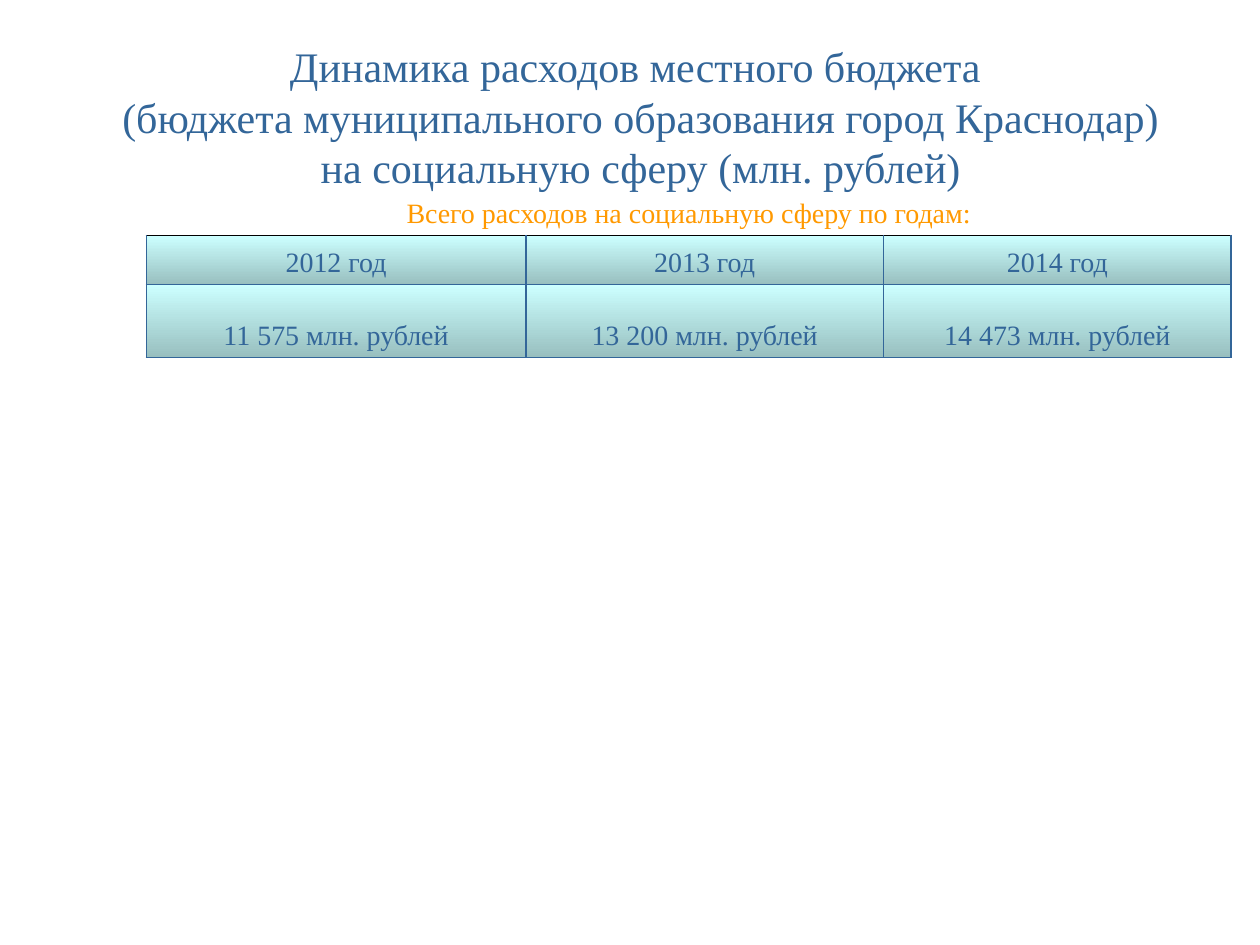
from lxml import etree
from pptx import Presentation
from pptx import util as u
from pptx.dml.color import RGBColor
from pptx.enum import text
from pptx.oxml.ns import qn

FONT = "Times New Roman"
BLUE, ORANGE, BLACK = "336699", "FF9900", "000000"
GRADIENT = ("CCFFFF", "98BFBF")
TITLE = (
    "Динамика расходов местного бюджета \v"
    "(бюджета муниципального образования город Краснодар)\v"
    "на социальную сферу (млн. рублей)"
)
CAPTION = "Всего расходов на социальную сферу по годам:"
SPENDING = {
    "2012 год": "11 575 млн. рублей",
    "2013 год": "13 200 млн. рублей",
    "2014 год": "14 473 млн. рублей",
}


def color(value):
    return RGBColor.from_string(value)


def write(frame, content, *, size, fill, anchor):
    frame.text = content
    frame.word_wrap = True
    frame.vertical_anchor = anchor
    para = frame.paragraphs[0]
    para.alignment = text.PP_ALIGN.CENTER
    for span in para.runs:
        span.font.name = FONT
        span.font.size = u.Pt(size)
        span.font.color.rgb = color(fill)


def set_borders(cell, *, left=None, right=None, top=None, bottom=None):
    properties = cell._tc.get_or_add_tcPr()
    sides = {"lnL": left, "lnR": right, "lnT": top, "lnB": bottom}
    for index, (tag, value) in enumerate(sides.items()):
        line = etree.Element(qn("a:" + tag), w=str(u.Pt(1)))
        if value:
            solid = etree.SubElement(line, qn("a:solidFill"))
            etree.SubElement(solid, qn("a:srgbClr"), val=value)
        else:
            etree.SubElement(line, qn("a:noFill"))
        properties.insert(index, line)


def fill_gradient(cell):
    cell.fill.gradient()
    cell.fill.gradient_angle = 270
    for stop, value, position in zip(cell.fill.gradient_stops, GRADIENT, (0, 1)):
        stop.color.rgb = color(value)
        stop.position = position


def add_title(page):
    title = page.shapes.title
    title.left, title.top = u.Cm(1.27), u.Cm(0.76)
    title.width, title.height = u.Cm(23.29), u.Cm(3.18)
    write(title.text_frame, TITLE, size=24, fill=BLUE, anchor=text.MSO_ANCHOR.MIDDLE)
    title.text_frame.auto_size = text.MSO_AUTO_SIZE.NONE


def add_spending_table(page):
    widths, heights = (7.65, 7.21, 7.01), (0.94, 0.99, 1.47)
    frame = page.shapes.add_table(
        len(heights), len(widths),
        u.Cm(2.95), u.Cm(3.81), u.Cm(sum(widths)), u.Cm(sum(heights)),
    )
    table = frame.table
    table.first_row = table.horz_banding = False
    for column, width in zip(table.columns, widths):
        column.width = u.Cm(width)
    for row, height in zip(table.rows, heights):
        row.height = u.Cm(height)

    table.cell(0, 0).merge(table.cell(0, len(widths) - 1))
    rows = ([CAPTION, "", ""], list(SPENDING), list(SPENDING.values()))
    for row_index, values in enumerate(rows):
        for column_index, value in enumerate(values):
            cell = table.cell(row_index, column_index)
            if row_index == 0:
                set_borders(cell, bottom=BLACK)
                cell.fill.background()
            else:
                top = BLACK if row_index == 1 else BLUE
                set_borders(cell, left=BLUE, right=BLUE, top=top, bottom=BLUE)
                fill_gradient(cell)
            cell.vertical_anchor = text.MSO_ANCHOR.BOTTOM
            if value:
                write_cell(cell, value, fill=BLUE if row_index else ORANGE)


def write_cell(cell, value, *, fill):
    cell.text = value
    para = cell.text_frame.paragraphs[0]
    para.alignment = text.PP_ALIGN.CENTER
    font = para.runs[0].font
    font.name, font.size = FONT, u.Pt(16)
    font.color.rgb = color(fill)


def main():
    deck = Presentation()
    deck.slide_width, deck.slide_height = u.Cm(25.4), u.Cm(19.05)
    page = deck.slides.add_slide(deck.slide_layouts[5])
    add_title(page)
    add_spending_table(page)
    deck.save("out.pptx")


if __name__ == "__main__":
    main()
